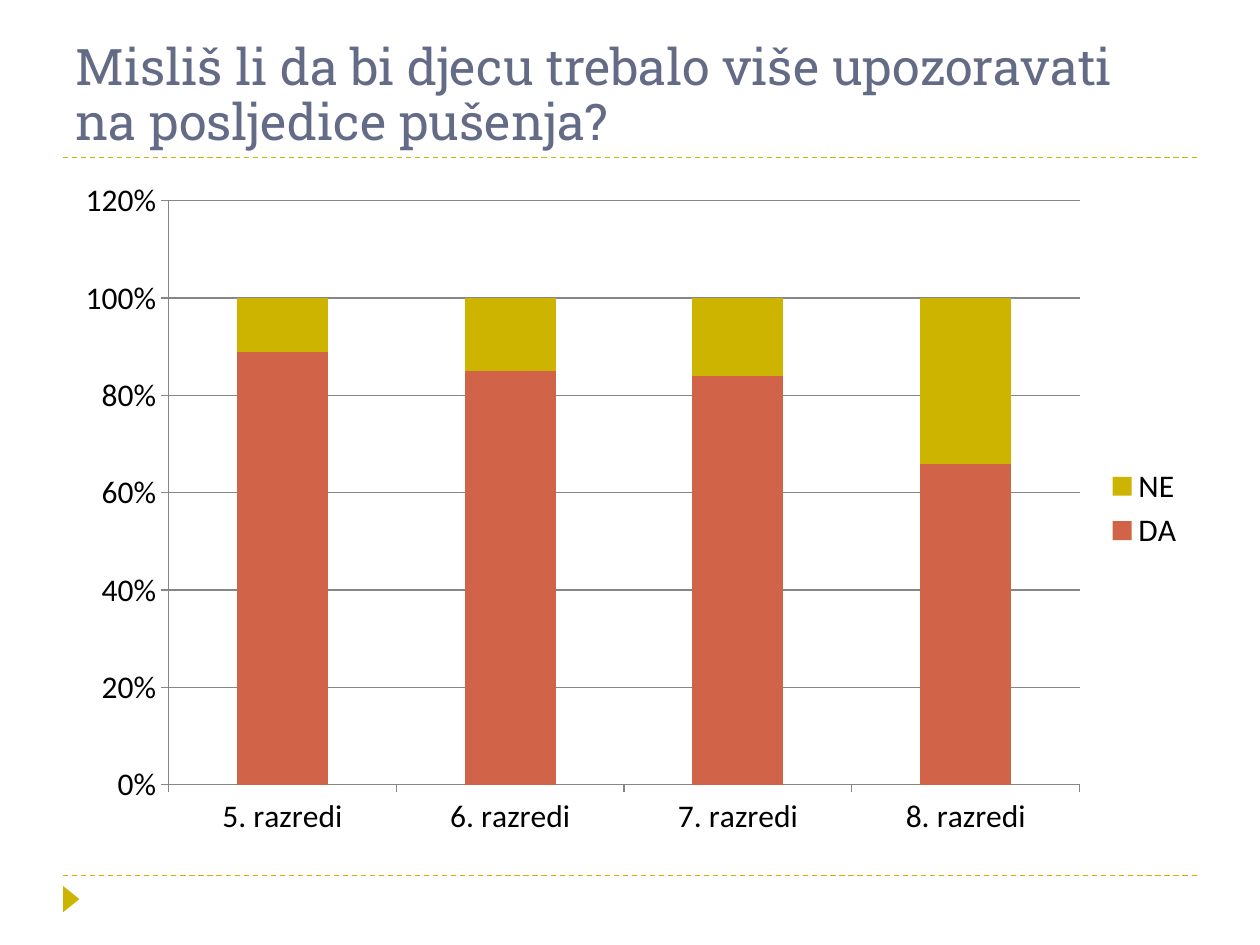
from lxml import etree
from pptx import Presentation
from pptx.chart.data import CategoryChartData
from pptx.dml.color import RGBColor
from pptx.enum import chart as ch, dml, shapes, text
from pptx.oxml.ns import qn
from pptx.util import Cm, Pt

GOLD = RGBColor(0xCC, 0xB4, 0x00)
RED = RGBColor(0xD1, 0x63, 0x49)
SLATE = RGBColor(0x64, 0x6B, 0x86)
GREY = RGBColor(0x86, 0x86, 0x86)
BLACK = RGBColor(0, 0, 0)

LEFT, WIDTH = Cm(1.27), Cm(22.86)
GRADES = [f"{n}. razredi" for n in range(5, 9)]
SERIES = [
    ("DA", (0.89, 0.85, 0.84, 0.66), RED),
    ("NE", (0.11, 0.15, 0.16, 0.34), GOLD),
]


def add_rule(slide, y):
    rule = slide.shapes.add_connector(
        shapes.MSO_CONNECTOR.STRAIGHT, LEFT, y, LEFT + WIDTH, y)
    rule.line.color.rgb = GOLD
    rule.line.width = Pt(0.75)
    rule.line.dash_style = dml.MSO_LINE.DASH
    etree.SubElement(rule.line._get_or_add_ln().getparent(), qn("a:effectLst"))


def add_marker(slide):
    mark = slide.shapes.add_shape(
        shapes.MSO_SHAPE.ISOSCELES_TRIANGLE,
        Cm(1.17), Cm(17.96), Cm(0.53), Cm(0.33))
    mark.rotation = 90
    mark.shadow.inherit = False
    mark.fill.solid()
    mark.fill.fore_color.rgb = GOLD
    mark.line.fill.background()


def set_title(slide, words):
    title = slide.shapes.title
    title.left, title.top = LEFT, Cm(0.43)
    title.width, title.height = WIDTH, Cm(2.74)
    frame = title.text_frame
    frame.text = words
    frame.word_wrap = True
    frame.auto_size = text.MSO_AUTO_SIZE.NONE
    frame.vertical_anchor = text.MSO_ANCHOR.BOTTOM
    para = frame.paragraphs[0]
    para.alignment = text.PP_ALIGN.LEFT
    para.line_spacing = 0.9
    para.font.name = "Roboto Slab"
    para.font.size = Pt(28.8)
    para.font.color.rgb = SLATE


def add_graph(slide):
    data = CategoryChartData(number_format="0%")
    data.categories = GRADES
    for name, vals, _ in SERIES:
        data.add_series(name, vals)
    chart = slide.shapes.add_chart(
        ch.XL_CHART_TYPE.COLUMN_STACKED,
        LEFT, Cm(3.39), WIDTH, Cm(13.72), data).chart
    chart.has_title = False
    chart.font.name = "Calibri"
    chart.font.size = Pt(18)
    chart.font.color.rgb = BLACK

    # Columns
    plot = chart.plots[0]
    plot.vary_by_categories = False
    plot.gap_width, plot.overlap = 150, 100
    for bar, (_, _, color) in zip(plot.series, SERIES):
        bar.format.fill.solid()
        bar.format.fill.fore_color.rgb = color

    # Axes
    for axis in (chart.category_axis, chart.value_axis):
        axis.major_tick_mark = ch.XL_TICK_MARK.OUTSIDE
        axis.format.line.color.rgb = GREY
        axis.format.line.width = Pt(0.75)
    scale = chart.value_axis
    scale.minimum_scale, scale.maximum_scale = 0, 1.2
    scale.major_unit = 0.2
    scale.tick_labels.number_format = "0%"
    scale.tick_labels.number_format_is_linked = False
    scale.has_major_gridlines = True
    scale.major_gridlines.format.line.color.rgb = GREY
    scale.major_gridlines.format.line.width = Pt(0.75)

    # Legend
    chart.has_legend = True
    chart.legend.position = ch.XL_LEGEND_POSITION.RIGHT
    chart.legend.include_in_layout = False


def main():
    deck = Presentation()
    deck.slide_width, deck.slide_height = Cm(25.4), Cm(19.05)
    slide = deck.slides.add_slide(deck.slide_layouts[5])
    # Frame
    for y in (Cm(17.65), Cm(3.17)):
        add_rule(slide, y)
    add_marker(slide)
    # Content
    set_title(slide, "Misliš li da bi djecu trebalo više upozoravati "
                     "na posljedice pušenja?")
    add_graph(slide)
    deck.save("out.pptx")


if __name__ == "__main__":
    main()
